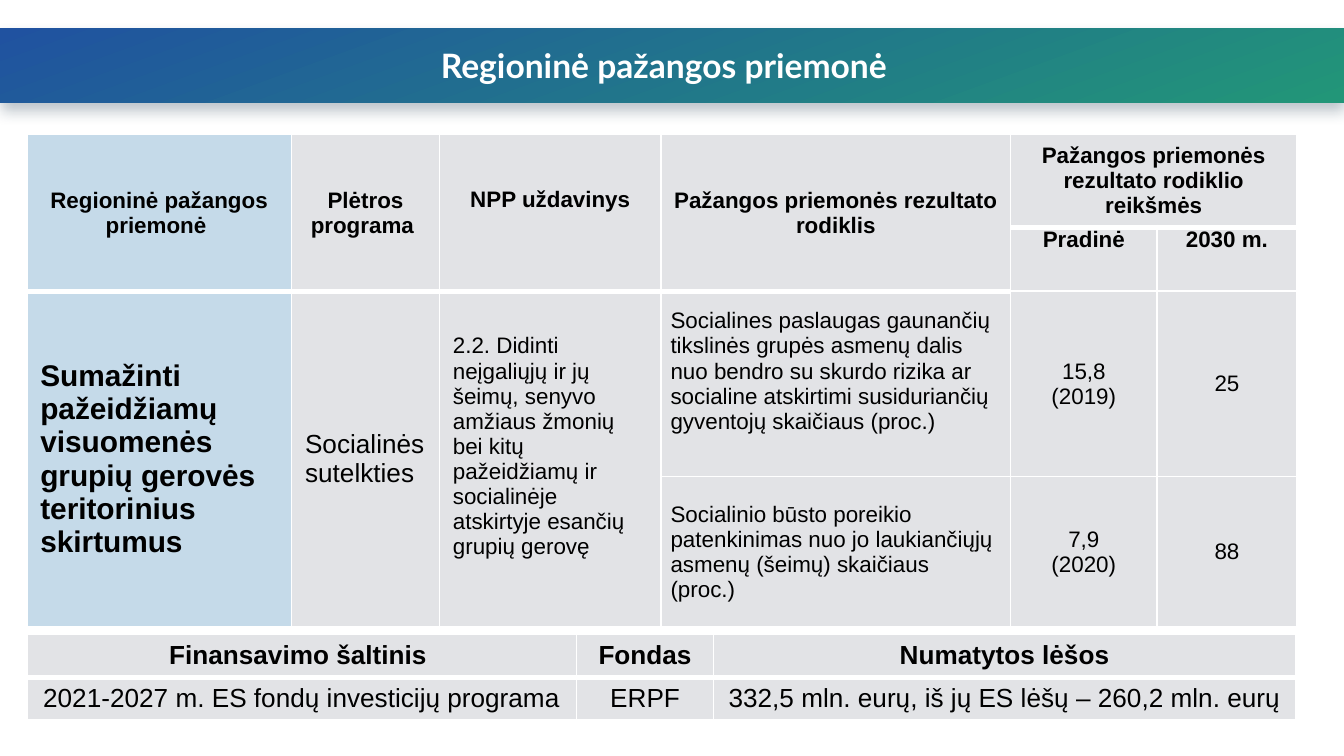
from dataclasses import dataclass

from lxml import etree
from pptx import Presentation
from pptx.dml.color import RGBColor
from pptx.enum.text import MSO_ANCHOR, MSO_AUTO_SIZE, PP_ALIGN
from pptx.oxml import parse_xml
from pptx.oxml.ns import nsdecls, qn
from pptx.util import Inches, Pt

LEFT, CENTER = PP_ALIGN.LEFT, PP_ALIGN.CENTER
TOP, MIDDLE = MSO_ANCHOR.TOP, MSO_ANCHOR.MIDDLE
NO_AUTOFIT = MSO_AUTO_SIZE.NONE
TITLE_ONLY = 5

COLORS = {
    "white": "FFFFFF",
    "black": "000000",
    "blue": "2052A0",
    "green": "229678",
    "shadow": "1F3B50",
    "measure": "C5DAE9",
    "cell": "E2E3E6",
}


@dataclass
class Cell:
    row: int
    col: int
    text: str
    rows: int = 1
    cols: int = 1
    size: int = 12
    bold: bool = False
    align: PP_ALIGN = CENTER
    anchor: MSO_ANCHOR = MIDDLE
    fill: str = "cell"
    tight: bool = False
    bottom: int = 1
    after: int = 0
    pad_right: float = 0
    pad_bottom: float = 0


def rgb(name: str) -> RGBColor:
    return RGBColor.from_string(COLORS[name])


def write_text(tf, text: str, *, size=12, bold=False, font="Arial",
               color="black", align=CENTER, after=0) -> None:
    """Write one paragraph for each line of text."""
    for i, line in enumerate(text.split("\n")):
        p = tf.add_paragraph() if i else tf.paragraphs[0]
        p.alignment = align
        p.space_before, p.space_after = Pt(0), Pt(after)
        r = p.add_run()
        r.text = line
        r.font.size, r.font.bold, r.font.name = Pt(size), bold, font
        r.font.color.rgb = rgb(color)


def set_borders(cell, bottom: int) -> None:
    tcPr = cell._tc.get_or_add_tcPr()
    for side, width in (("L", 1), ("R", 1), ("T", 1), ("B", bottom)):
        ln = etree.SubElement(tcPr, qn(f"a:ln{side}"), w=str(Pt(width)))
        fill = etree.SubElement(ln, qn("a:solidFill"))
        etree.SubElement(fill, qn("a:srgbClr"), val=COLORS["white"])


def draw_cell(table, spec: Cell) -> None:
    cell = table.cell(spec.row, spec.col)
    last_row, last_col = spec.row + spec.rows - 1, spec.col + spec.cols - 1
    if spec.rows > 1 or spec.cols > 1:
        cell.merge(table.cell(last_row, last_col))
    for row in range(spec.row, last_row + 1):
        for col in range(spec.col, last_col + 1):
            part = table.cell(row, col)
            set_borders(part, spec.bottom)
            part.fill.solid()
            part.fill.fore_color.rgb = rgb(spec.fill)
    cell.vertical_anchor = spec.anchor
    if spec.tight:
        cell.margin_left = cell.margin_right = Inches(0.07)
        cell.margin_top = cell.margin_bottom = 0
    cell.margin_right += Inches(spec.pad_right)
    cell.margin_bottom += Inches(spec.pad_bottom)
    write_text(cell.text_frame, spec.text, size=spec.size, bold=spec.bold,
               align=spec.align, after=spec.after)


def draw_table(s, left: float, top: float, widths: list[float],
               heights: list[float], cells: list[Cell]) -> None:
    table = s.shapes.add_table(
        len(heights), len(widths), Inches(left), Inches(top),
        Inches(sum(widths)), Inches(sum(heights))).table
    table.first_row = table.horz_banding = False
    for column, width in zip(table.columns, widths):
        column.width = Inches(width)
    for row, height in zip(table.rows, heights):
        row.height = Inches(height)
    for spec in cells:
        draw_cell(table, spec)


def draw_title(s, text: str) -> None:
    sp = s.shapes.title
    sp.left, sp.top = Inches(0), Inches(0.21)
    sp.width, sp.height = Inches(10), Inches(0.55)
    sp.fill.gradient()
    sp.fill.gradient_angle = 290
    for stop, color in zip(sp.fill.gradient_stops, ("blue", "green")):
        stop.color.rgb = rgb(color)
    sp.line.fill.background()
    sp._element.spPr.append(parse_xml(
        f'<a:effectLst {nsdecls("a")}><a:outerShdw blurRad="{Pt(8)}" '
        f'dist="{Pt(4)}" dir="5400000" algn="t" rotWithShape="0">'
        f'<a:srgbClr val="{COLORS["shadow"]}"><a:alpha val="30000"/>'
        '</a:srgbClr></a:outerShdw></a:effectLst>'))
    tf = sp.text_frame
    tf.auto_size = NO_AUTOFIT
    tf.vertical_anchor = MIDDLE
    tf.margin_right = Inches(0.22)
    write_text(tf, text, size=18, bold=True, font="Lato", color="white")


MEASURE_CELLS = [
    # Header
    Cell(0, 0, "Regioninė pažangos priemonė ", rows=2, bold=True,
         fill="measure", bottom=3),
    Cell(0, 1, "Plėtros programa ", rows=2, bold=True, bottom=3),
    Cell(0, 2, "NPP uždavinys", rows=2, bold=True, bottom=3, pad_bottom=0.19),
    Cell(0, 3, "Pažangos priemonės rezultato rodiklis", rows=2, bold=True,
         tight=True, bottom=3),
    Cell(0, 4, "Pažangos priemonės rezultato rodiklio reikšmės", cols=2,
         bold=True, tight=True, bottom=3),
    Cell(1, 4, "Pradinė", bold=True, anchor=TOP, tight=True),
    Cell(1, 5, "2030 m.", bold=True, anchor=TOP, tight=True),
    # Measure, programme and objective
    Cell(2, 0, "Sumažinti pažeidžiamų visuomenės grupių gerovės teritorinius "
         "skirtumus", rows=2, size=16, bold=True, align=LEFT, fill="measure"),
    Cell(2, 1, "Socialinės sutelkties", rows=2, size=14, align=LEFT),
    Cell(2, 2, "2.2. Didinti neįgaliųjų ir jų šeimų, senyvo amžiaus žmonių "
         "bei kitų pažeidžiamų ir socialinėje atskirtyje esančių grupių "
         "gerovę", rows=2, align=LEFT, pad_bottom=0.19),
    # Indicators and their values
    Cell(2, 3, "Socialines paslaugas gaunančių tikslinės grupės asmenų dalis "
         "nuo bendro su skurdo rizika ar socialine atskirtimi susiduriančių "
         "gyventojų skaičiaus (proc.)", align=LEFT, tight=True,
         pad_bottom=0.19),
    Cell(2, 4, "15,8\n(2019)", tight=True),
    Cell(2, 5, "25", tight=True),
    Cell(3, 3, "Socialinio būsto poreikio patenkinimas nuo jo laukiančiųjų "
         "asmenų (šeimų) skaičiaus (proc.)", align=LEFT, tight=True, after=8,
         pad_right=0.04),
    Cell(3, 4, "7,9\n(2020)", tight=True),
    Cell(3, 5, "88", tight=True),
]

FUNDING = [
    ("Finansavimo šaltinis ", "2021-2027 m. ES fondų investicijų programa"),
    ("Fondas", "ERPF"),
    ("Numatytos lėšos", "332,5 mln. eurų, iš jų ES lėšų – 260,2 mln. eurų"),
]


def main() -> None:
    prs = Presentation()
    prs.slide_width = Inches(10)
    prs.slide_height = prs.slide_width * 9 // 16
    s = prs.slides.add_slide(prs.slide_layouts[TITLE_ONLY])

    draw_title(s, "Regioninė pažangos priemonė")

    # Measure with its indicators
    draw_table(s, 0.2, 1, [1.97, 1.1, 1.65, 2.6, 1.09, 1.04],
               [0.69, 0.47, 1.38, 1.12], MEASURE_CELLS)

    # Funding
    funding_cells = [
        Cell(row, col, text, size=14, bold=row == 0, bottom=1 if row else 3)
        for col, column in enumerate(FUNDING)
        for row, text in enumerate(column)
    ]
    draw_table(s, 0.2, 4.72, [4.09, 1.02, 4.33], [0.32, 0.32], funding_cells)

    prs.save("out.pptx")


if __name__ == "__main__":
    main()
